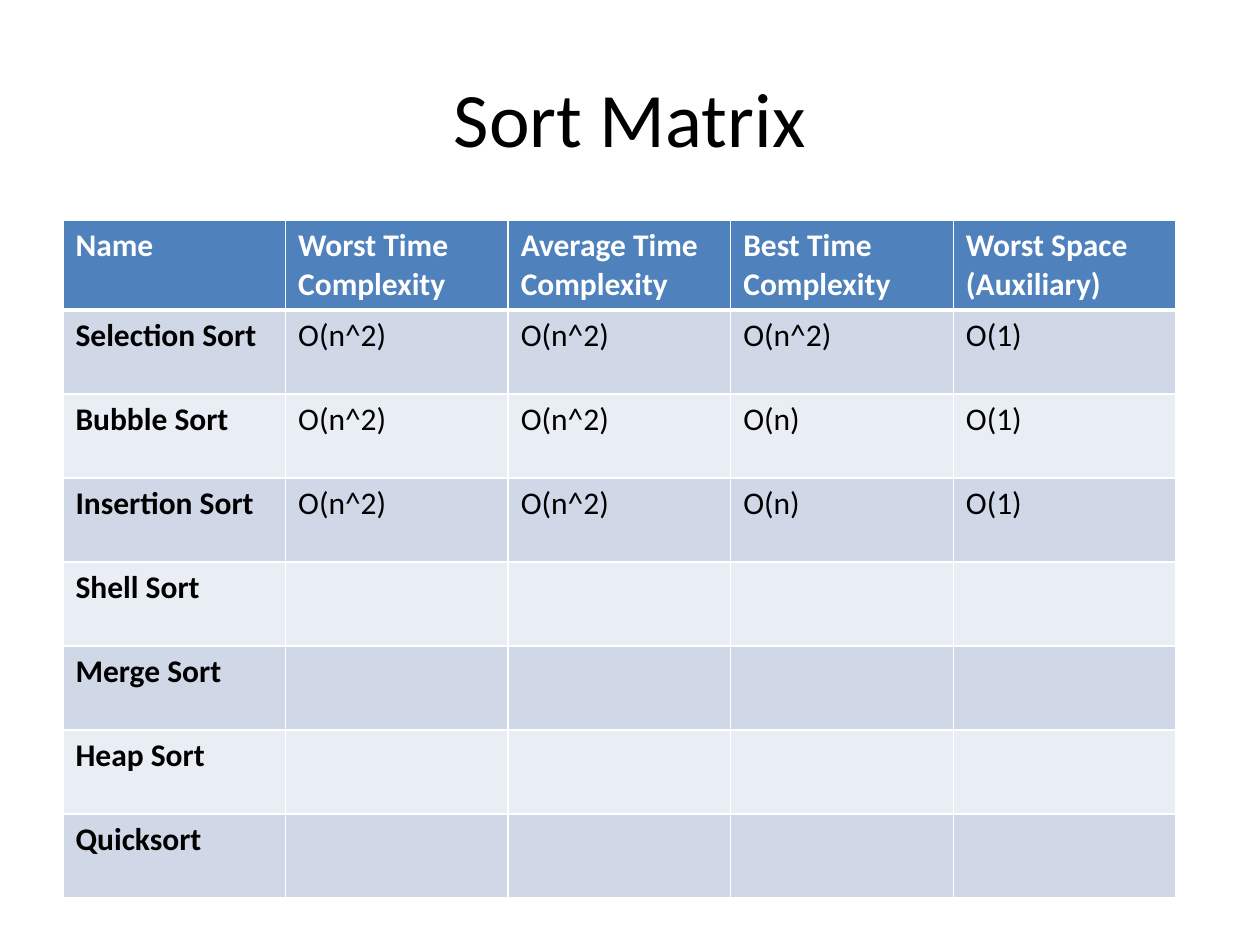
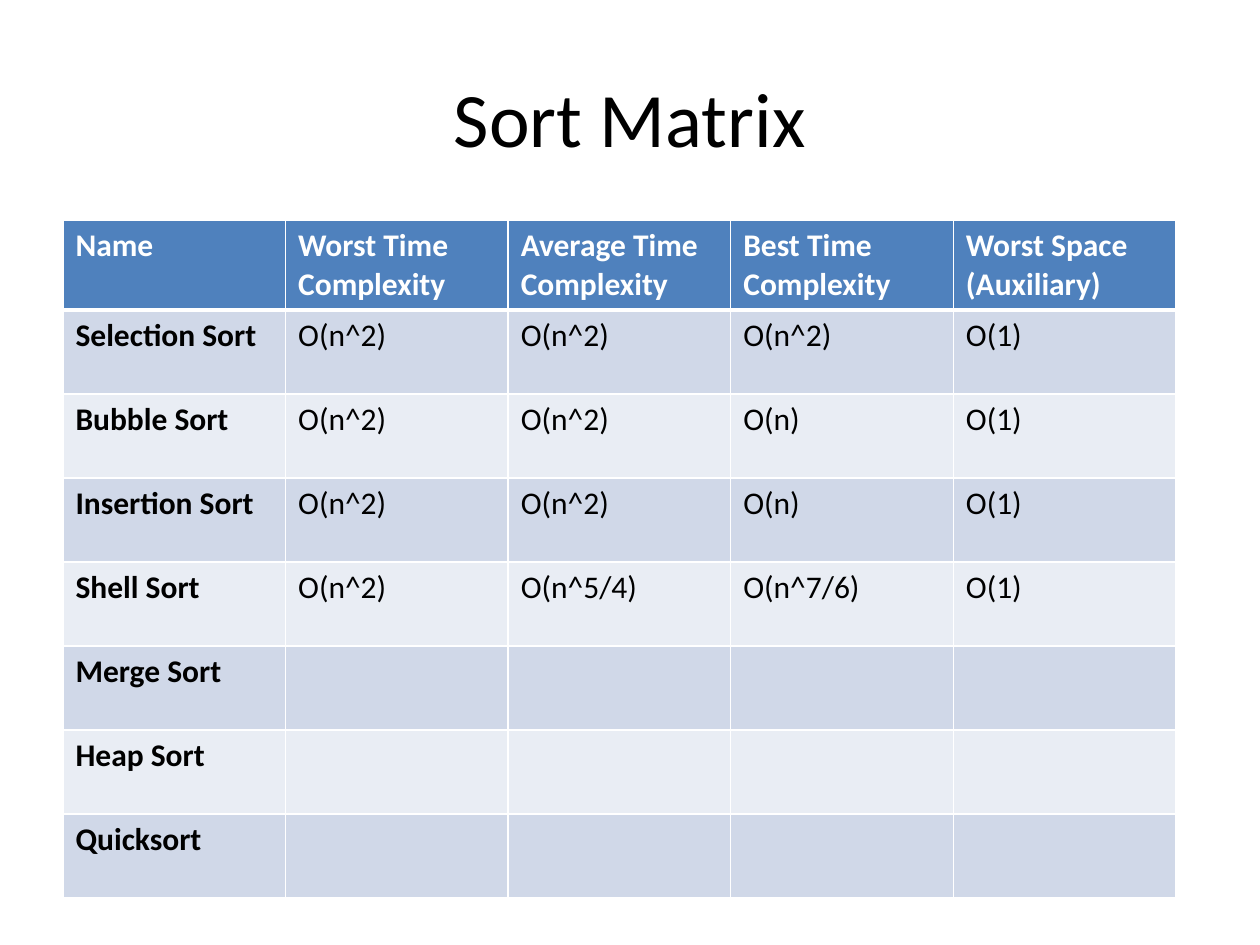
import dataclasses
import typing

import lxml.etree
import pptx
import pptx.dml.color
import pptx.enum.text
import pptx.oxml.ns
import pptx.presentation
import pptx.slide
import pptx.table
import pptx.util

SLIDE_WIDTH = pptx.util.Inches(10)
SLIDE_HEIGHT = pptx.util.Inches(7.5)
GRID_COLUMNS, GRID_ROWS = 60, 45
TITLE_ONLY_LAYOUT = 5

FONT = "Calibri"
BLACK, WHITE = "000000", "FFFFFF"
HEADER_FILL = "4F81BD"
BAND_FILLS = ("D0D8E8", "E9EDF4")
THIN_BORDER, HEADER_BORDER = 1, 3

TITLE = "Sort Matrix"
HEADINGS = (
    "Name",
    "Worst Time Complexity",
    "Average Time Complexity",
    "Best Time Complexity",
    "Worst Space (Auxiliary)",
)


@dataclasses.dataclass(frozen=True)
class GridArea:
    """A rectangle in columns and rows of the slide grid."""

    column: float
    row: float
    columns: float
    rows: float

    def placement(self) -> dict[str, int]:
        return {
            "left": round(SLIDE_WIDTH * self.column / GRID_COLUMNS),
            "top": round(SLIDE_HEIGHT * self.row / GRID_ROWS),
            "width": round(SLIDE_WIDTH * self.columns / GRID_COLUMNS),
            "height": round(SLIDE_HEIGHT * self.rows / GRID_ROWS),
        }


@dataclasses.dataclass(frozen=True)
class SortAlgorithm:
    name: str
    worst_time: str = ""
    average_time: str = ""
    best_time: str = ""
    worst_space: str = ""


TITLE_AREA = GridArea(3, 1.8, 54, 7.5)
MATRIX_AREA = GridArea(3, 10.5, 53, 32)

SIMPLE_SORTS = (
    SortAlgorithm("Selection Sort", "O(n^2)", "O(n^2)", "O(n^2)", "O(1)"),
    SortAlgorithm("Bubble Sort", "O(n^2)", "O(n^2)", "O(n)", "O(1)"),
    SortAlgorithm("Insertion Sort", "O(n^2)", "O(n^2)", "O(n)", "O(1)"),
)
UNANSWERED_SHELL_SORT = SortAlgorithm("Shell Sort")
ANSWERED_SHELL_SORT = SortAlgorithm("Shell Sort", "O(n^2)", "O(n^5/4)", "O(n^7/6)", "O(1)")
REMAINING_SORTS = tuple(
    SortAlgorithm(name) for name in ("Merge Sort", "Heap Sort", "Quicksort")
)


def color(hex_code: str) -> pptx.dml.color.RGBColor:
    return pptx.dml.color.RGBColor.from_string(hex_code)


def set_attributes(target: typing.Any, values: dict[str, typing.Any]) -> None:
    for name, value in values.items():
        setattr(target, name, value)


def format_font(font: typing.Any, size: float, hex_code: str, bold: bool) -> None:
    set_attributes(font, {"name": FONT, "size": pptx.util.Pt(size), "bold": bold})
    font.color.rgb = color(hex_code)


def add_borders(cell: pptx.table._Cell, top: float, bottom: float) -> None:
    """Add white cell borders; call before filling, as the XML order requires."""
    qualified = pptx.oxml.ns.qn
    properties = cell._tc.get_or_add_tcPr()
    widths = {"lnL": THIN_BORDER, "lnR": THIN_BORDER, "lnT": top, "lnB": bottom}
    for tag, width in widths.items():
        line = lxml.etree.SubElement(
            properties, qualified(f"a:{tag}"), w=str(pptx.util.Pt(width))
        )
        fill = lxml.etree.SubElement(line, qualified("a:solidFill"))
        lxml.etree.SubElement(fill, qualified("a:srgbClr"), val=WHITE)


def add_title(slide: pptx.slide.Slide) -> None:
    title = slide.shapes.title
    set_attributes(title, TITLE_AREA.placement())
    title.text_frame.text = TITLE
    title.text_frame.vertical_anchor = pptx.enum.text.MSO_ANCHOR.MIDDLE
    paragraph = title.text_frame.paragraphs[0]
    paragraph.alignment = pptx.enum.text.PP_ALIGN.CENTER
    format_font(paragraph.runs[0].font, 44, BLACK, False)


def fill_cell(cell: pptx.table._Cell, text: str, row: int, column: int) -> None:
    is_header = row == 0
    add_borders(
        cell,
        top=HEADER_BORDER if row == 1 else THIN_BORDER,
        bottom=HEADER_BORDER if is_header else THIN_BORDER,
    )
    cell.fill.solid()
    cell.fill.fore_color.rgb = color(
        HEADER_FILL if is_header else BAND_FILLS[(row - 1) % len(BAND_FILLS)]
    )
    if text:
        cell.text = text
        format_font(
            cell.text_frame.paragraphs[0].runs[0].font,
            18,
            WHITE if is_header else BLACK,
            is_header or column == 0,
        )


def add_matrix(slide: pptx.slide.Slide, algorithms: tuple[SortAlgorithm, ...]) -> None:
    rows = [HEADINGS, *map(dataclasses.astuple, algorithms)]
    table = slide.shapes.add_table(
        len(rows), len(HEADINGS), **MATRIX_AREA.placement()
    ).table
    for row, texts in enumerate(rows):
        for column, text in enumerate(texts):
            fill_cell(table.cell(row, column), text, row, column)


def add_matrix_slide(
    presentation: pptx.presentation.Presentation, shell_sort: SortAlgorithm
) -> None:
    slide = presentation.slides.add_slide(presentation.slide_layouts[TITLE_ONLY_LAYOUT])
    slide.background.fill.solid()
    slide.background.fill.fore_color.rgb = color(WHITE)
    add_title(slide)
    add_matrix(slide, (*SIMPLE_SORTS, shell_sort, *REMAINING_SORTS))


def main() -> None:
    presentation = pptx.Presentation()
    set_attributes(
        presentation, {"slide_width": SLIDE_WIDTH, "slide_height": SLIDE_HEIGHT}
    )
    for shell_sort in (UNANSWERED_SHELL_SORT, ANSWERED_SHELL_SORT):
        add_matrix_slide(presentation, shell_sort)
    presentation.save("out.pptx")


if __name__ == "__main__":
    main()
